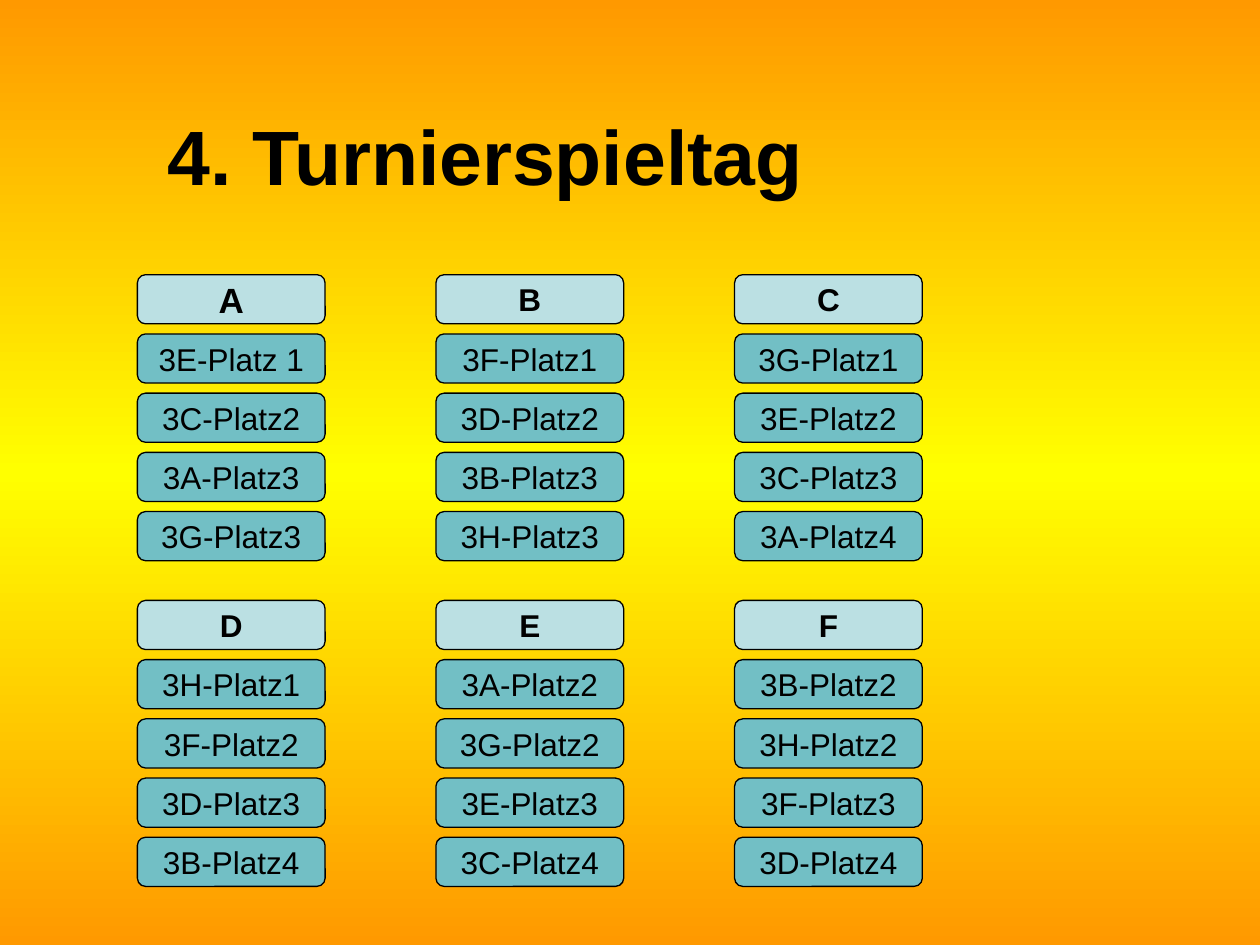
import copy
import dataclasses

import pptx
import pptx.dml.color
import pptx.enum.shapes
import pptx.enum.text
import pptx.oxml.ns
import pptx.util

Inches = pptx.util.Inches
Kind = pptx.enum.shapes.MSO_SHAPE
Text = pptx.enum.text


@dataclasses.dataclass(frozen=True)
class Theme:
    font: str = "Arial"
    ink: str = "000000"
    head: str = "BBE0E3"
    cell: str = "72BFC5"
    glow: tuple = ((0, "FF9900"), (0.5, "FFFF00"), (1, "FF9900"))
    title: int = 44
    big: int = 20
    body: int = 18
    line: float = 0.75


@dataclasses.dataclass(frozen=True)
class Grid:
    left: float = 1.09
    top: float = 2.18
    col: float = 2.37   # column pitch
    row: float = 0.47   # row pitch
    band: float = 5.5   # rows from one band of groups to the next
    wide: float = 1.49
    high: float = 0.39


@dataclasses.dataclass(frozen=True)
class Group:
    name: str
    teams: tuple
    size: int


THEME = Theme()
GRID = Grid()
ACROSS = 3
GROUPS = (
    Group("A", ("3E-Platz 1", "3C-Platz2", "3A-Platz3", "3G-Platz3"), THEME.big),
    Group("B", ("3F-Platz1", "3D-Platz2", "3B-Platz3", "3H-Platz3"), THEME.body),
    Group("C", ("3G-Platz1", "3E-Platz2", "3C-Platz3", "3A-Platz4"), THEME.body),
    Group("D", ("3H-Platz1", "3F-Platz2", "3D-Platz3", "3B-Platz4"), THEME.body),
    Group("E", ("3A-Platz2", "3G-Platz2", "3E-Platz3", "3C-Platz4"), THEME.body),
    Group("F", ("3B-Platz2", "3H-Platz2", "3F-Platz3", "3D-Platz4"), THEME.body),
)


def color(code: str) -> pptx.dml.color.RGBColor:
    return pptx.dml.color.RGBColor.from_string(code)


def write(shape, words: str, size: int, bold: bool, wrap: bool) -> None:
    """Put one centred run in the middle of a shape."""
    frame = shape.text_frame
    frame.word_wrap = wrap
    frame.vertical_anchor = Text.MSO_ANCHOR.MIDDLE
    para = frame.paragraphs[0]
    para.alignment = Text.PP_ALIGN.CENTER
    run = para.add_run()
    run.text = words
    run.font.name = THEME.font
    run.font.size = pptx.util.Pt(size)
    run.font.bold = bold
    run.font.color.rgb = color(THEME.ink)


def paint(slide) -> None:
    """Fill the background with a vertical three-stop gradient."""
    fill = slide.background.fill
    fill.gradient()
    fill.gradient_angle = 270
    stops = slide.element.find(".//" + pptx.oxml.ns.qn("a:gsLst"))
    stops.insert(1, copy.deepcopy(stops[0]))
    for stop, (place, code) in zip(fill.gradient_stops, THEME.glow):
        stop.position = place
        stop.color.rgb = color(code)


def box(slide, col: int, row: float, words: str, fill: str,
        size: int, bold: bool) -> None:
    """Draw one rounded box at a grid column and row."""
    shape = slide.shapes.add_shape(
        Kind.FLOWCHART_ALTERNATE_PROCESS,
        Inches(GRID.left + col * GRID.col), Inches(GRID.top + row * GRID.row),
        Inches(GRID.wide), Inches(GRID.high))
    shape.shadow.inherit = False
    shape.fill.solid()
    shape.fill.fore_color.rgb = color(fill)
    shape.line.color.rgb = color(THEME.ink)
    shape.line.width = pptx.util.Pt(THEME.line)
    write(shape, words, size, bold, False)


def draw(slide, group: Group, index: int) -> None:
    """Draw a group: its heading and the teams below."""
    band, col = divmod(index, ACROSS)
    top = band * GRID.band
    box(slide, col, top, group.name, THEME.head, group.size, True)
    for step, team in enumerate(group.teams, 1):
        box(slide, col, top + step, team, THEME.cell, THEME.body, False)


def main() -> None:
    deck = pptx.Presentation()
    deck.slide_width, deck.slide_height = Inches(10), Inches(7.5)
    slide = deck.slides.add_slide(deck.slide_layouts[6])
    paint(slide)

    # Title
    title = slide.shapes.add_textbox(
        Inches(0.39), Inches(0.79), Inches(6.93), Inches(0.87))
    write(title, "4. Turnierspieltag", THEME.title, True, True)

    # Groups
    for index, group in enumerate(GROUPS):
        draw(slide, group, index)

    deck.save("out.pptx")


if __name__ == "__main__":
    main()
